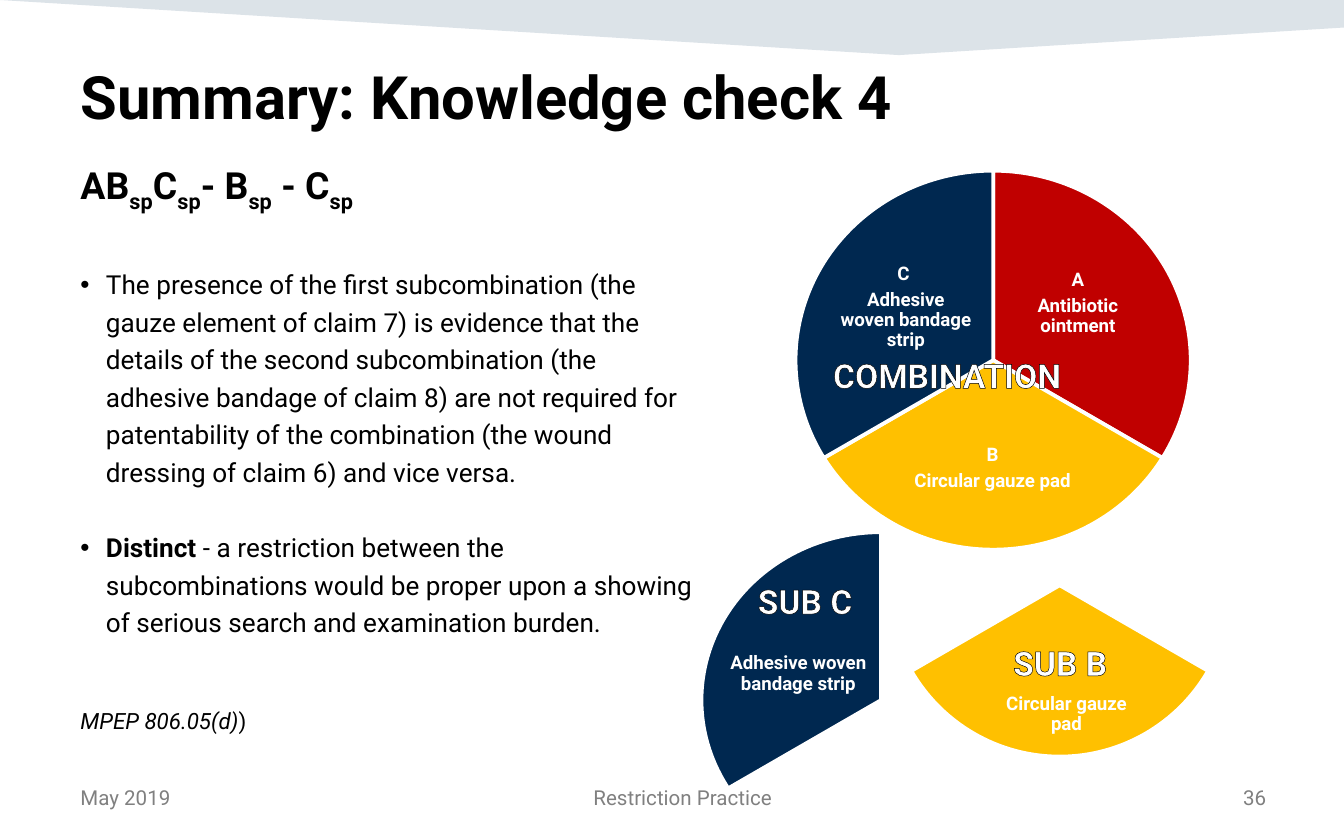
from lxml.etree import SubElement
from pptx import Presentation
from pptx.dml.color import RGBColor
from pptx.enum.shapes import MSO_SHAPE
from pptx.enum.text import MSO_ANCHOR, MSO_AUTO_SIZE, PP_ALIGN
from pptx.oxml.ns import qn
from pptx.util import Inches, Pt

FONT = "Roboto"
BLACK, WHITE, GRAY = "000000", "FFFFFF", "808080"
RED, GOLD, NAVY, BAND = "C00000", "FFC000", "002850", "164469"
LABEL = dict(size=10, color=WHITE, bold=True, align=PP_ALIGN.CENTER,
             line_spacing=0.9, after=3)


def rgb(value):
    return RGBColor.from_string(value)


def add_run(paragraph, text, size=14, color=BLACK, bold=False, italic=False,
            subscript=False, outline=None):
    run = paragraph.add_run()
    run.text = text
    font = run.font
    font.name, font.size, font.bold, font.italic = FONT, Pt(size), bold, italic
    font.color.rgb = rgb(color)
    properties = run._r.get_or_add_rPr()
    if subscript:
        properties.set("baseline", "-25000")
    if outline:
        line = SubElement(properties, qn("a:ln"), w=str(Pt(0.75)))
        fill = SubElement(line, qn("a:solidFill"))
        SubElement(fill, qn("a:srgbClr"), val=outline)
        properties.insert(0, line)


def add_paragraph(frame, text, align=PP_ALIGN.LEFT, line_spacing=1.0, before=0,
                  after=0, bullet=False, **run_format):
    """Text is a string, or a list of (string, format) pairs."""
    first = frame.paragraphs[0]
    paragraph = frame.add_paragraph() if first.runs else first
    paragraph.alignment = align
    paragraph.line_spacing = line_spacing
    paragraph.space_before, paragraph.space_after = Pt(before), Pt(after)
    if bullet:
        properties = paragraph._p.get_or_add_pPr()
        properties.set("marL", str(Inches(0.19)))
        properties.set("indent", str(-Inches(0.19)))
        SubElement(properties, qn("a:buFont"), typeface="Arial")
        SubElement(properties, qn("a:buChar"), char="•")
    for part, extra in [(text, {})] if isinstance(text, str) else text:
        add_run(paragraph, part, **{**run_format, **extra})


def add_text_box(shapes, left, top, width, height, lines=(), inset=None,
                 anchor=MSO_ANCHOR.TOP, wrap=True, **text_format):
    box = shapes.add_textbox(Inches(left), Inches(top), Inches(width), Inches(height))
    frame = box.text_frame
    frame.word_wrap, frame.vertical_anchor = wrap, anchor
    if inset is not None:
        frame.margin_left = frame.margin_right = Inches(inset)
        frame.margin_top = frame.margin_bottom = Inches(inset)
    for line in lines:
        add_paragraph(frame, line, **text_format)
    return frame


def add_wedge(shapes, left, top, width, height, start, end, color):
    """Draw a pie wedge between two angles in degrees, clockwise from the right."""
    wedge = shapes.add_shape(MSO_SHAPE.PIE, Inches(left), Inches(top),
                             Inches(width), Inches(height))
    # Adjustments count 100000 units, angles 60000 units a degree
    wedge.adjustments[0], wedge.adjustments[1] = start * 0.6, end * 0.6
    wedge.shadow.inherit = False
    wedge.fill.solid()
    wedge.fill.fore_color.rgb = rgb(color)
    wedge.line.color.rgb = rgb(WHITE)
    wedge.line.width = Pt(2)


def add_label(shapes, left, top, width, height, lines, inset=0.01):
    add_text_box(shapes, left, top, width, height, lines, inset=inset,
                 anchor=MSO_ANCHOR.MIDDLE, **LABEL)


def add_caption(shapes, left, top, width, height, text):
    add_text_box(shapes, left, top, width, height, [text], wrap=False, size=18,
                 color=WHITE, bold=True, outline=BLACK)


def add_band(slide, width, height):
    corners = [(width, 0), (width, height / 2), (width * 0.669, height)]
    builder = slide.shapes.build_freeform(0, 0)
    builder.add_line_segments([(Inches(x), Inches(y)) for x, y in corners], close=True)
    band = builder.convert_to_shape()
    band.shadow.inherit = False
    band.line.fill.background()
    band.fill.solid()
    band.fill.fore_color.rgb = rgb(BAND)
    color = band._element.spPr.find(qn("a:solidFill")).find(qn("a:srgbClr"))
    SubElement(color, qn("a:alpha"), val="15000")


def add_title(slide, left, top, width, height):
    title = slide.shapes.title
    title.left, title.top = Inches(left), Inches(top)
    title.width, title.height = Inches(width), Inches(height)
    frame = title.text_frame
    frame.auto_size = MSO_AUTO_SIZE.NONE
    frame.vertical_anchor = MSO_ANCHOR.MIDDLE
    add_paragraph(frame, "Summary: Knowledge check 4", size=32, bold=True)


def add_body(slide, left, top, width, height):
    frame = add_text_box(slide.shapes, left, top, width, height)
    sub = dict(subscript=True)
    add_paragraph(frame, [("AB", {}), ("sp", sub), ("C", {}), ("sp", sub),
                          ("- B", {}), ("sp", sub), (" - C", {}), ("sp", sub)],
                  size=20, bold=True, after=6)
    bullet = dict(bullet=True, line_spacing=1.2, before=20)
    add_paragraph(frame, "The presence of the first subcombination (the gauze element "
                  "of claim 7) is evidence that the details of the second "
                  "subcombination (the adhesive bandage of claim 8) are not required "
                  "for patentability of the combination (the wound dressing of "
                  "claim 6) and vice versa.", **bullet)
    add_paragraph(frame, [("Distinct", dict(bold=True)),
                          (" - a restriction between the subcombinations would be "
                           "proper upon a showing of serious search and examination "
                           "burden.", {})], **bullet)
    add_paragraph(frame, [("MPEP 806.05(d)", dict(italic=True)), (")", {})],
                  size=12, before=37, after=6)


def add_combination(slide, left, top, width, height):
    shapes = slide.shapes.add_group_shape().shapes
    # Each wedge: start, end, colour, label offset and size, label lines
    wedges = [
        (270, 30, RED, (1.6, 0.52, 1, 0.94), ["A", "Antibiotic ointment"]),
        (30, 150, GOLD, (0.8, 1.78, 1.33, 0.87), ["B", "Circular gauze pad"]),
        (150, 270, NAVY, (0.32, 0.55, 1, 0.94), ["C ", "Adhesive woven bandage strip"]),
    ]
    for start, end, color, (x, y, label_width, label_height), lines in wedges:
        add_wedge(shapes, left, top, width, height, start, end, color)
        add_label(shapes, left + x, top + y, label_width, label_height, lines)
    add_caption(shapes, left + 0.18, top + 1.32, 2.21, 0.43, "COMBINATION")


def add_subcombination_b(slide, left, top, width, height):
    shapes = slide.shapes.add_group_shape().shapes
    add_wedge(shapes, left, top, width, height, 30, 150, GOLD)
    add_label(shapes, left + 0.75, top + 1.84, 1.15, 0.79, ["Circular gauze pad"], 0.02)
    add_caption(shapes, left + 0.83, top + 1.65, 0.92, 0.4, "SUB B")


def add_subcombination_c(slide, left, top, width, height):
    shapes = slide.shapes.add_group_shape().shapes
    add_wedge(shapes, left, top, width, height, 150, 270, NAVY)
    add_label(shapes, left + 0.09, top + 0.64, 1.26, 0.83,
              ["Adhesive woven bandage strip"], 0.02)
    add_caption(shapes, left + 0.32, top + 0.31, 0.96, 0.4, "SUB C")


def add_footer(slide, left, top, height):
    for x, width, text, align in [(0, 1.5, "May 2019", PP_ALIGN.LEFT),
                                  (1.57, 6.02, "Restriction Practice", PP_ALIGN.CENTER),
                                  (7.67, 1.35, "36", PP_ALIGN.RIGHT)]:
        add_text_box(slide.shapes, left + x, top, width, height, [text],
                     size=11, color=GRAY, align=align)


def main():
    presentation = Presentation()
    presentation.slide_width, presentation.slide_height = Inches(10), Inches(6.25)
    slide = presentation.slides.add_slide(presentation.slide_layouts[5])
    add_band(slide, 10, 0.41)
    add_title(slide, 0.5, 0.41, 9, 0.6)
    add_body(slide, 0.5, 1.16, 4.78, 4.49)
    add_combination(slide, 5.92, 1.27, 2.94, 2.82)
    add_subcombination_b(slide, 6.61, 3.08, 2.55, 2.55)
    add_subcombination_c(slide, 5.22, 3.96, 2.67, 2.5)
    add_footer(slide, 0.5, 5.79, 0.33)
    presentation.save("out.pptx")


if __name__ == "__main__":
    main()
